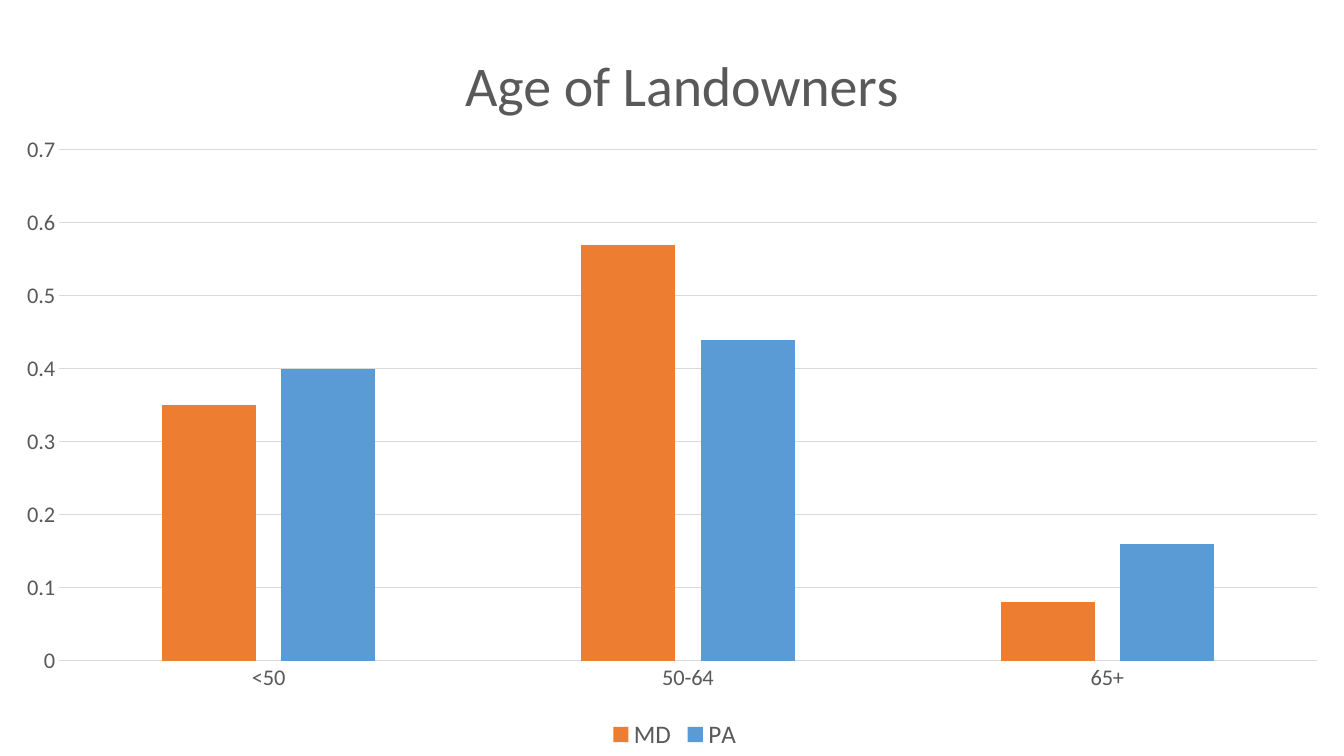
from lxml.etree import SubElement
from pptx import Presentation
from pptx.chart.data import CategoryChartData
from pptx.dml.color import RGBColor
from pptx.enum.chart import XL_CHART_TYPE, XL_LEGEND_POSITION, XL_TICK_MARK
from pptx.oxml.ns import qn
from pptx.util import Emu, Pt

PX = 9072
WIDTH, HEIGHT = 1344, 756
FONT = "Calibri"
TEXT_GREY, LINE_GREY = "595959", "D9D9D9"
AGE_GROUPS = ["<50", "50-64", "65+"]
STATES = [
    ("MD", [0.35, 0.57, 0.08], "ED7D31"),
    ("PA", [0.4, 0.44, 0.16], "5B9BD5"),
]


def px(length):
    return Emu(length * PX)


def color(hex_code):
    return RGBColor.from_string(hex_code)


def style_font(font, size):
    font.name = FONT
    font.size = Pt(size)
    font.bold = False
    font.color.rgb = color(TEXT_GREY)


def style_line(line):
    line.width = Pt(0.75)
    line.color.rgb = color(LINE_GREY)


def place(part, left, top, width=None, height=None):
    """Give a chart part a fixed position, in px of the slide."""
    layout = part.find(qn("c:layout"))
    if layout is None:
        layout = SubElement(part, qn("c:layout"))
        anchor = next(part.find(qn(tag)) for tag in ("c:tx", "c:legendPos")
                      if part.find(qn(tag)) is not None)
        anchor.addnext(layout)
    manual = SubElement(layout, qn("c:manualLayout"))
    settings = [("xMode", "edge"), ("yMode", "edge"),
                ("x", left / WIDTH), ("y", top / HEIGHT)]
    if width:
        settings.insert(0, ("layoutTarget", "inner"))
        settings += [("w", width / WIDTH), ("h", height / HEIGHT)]
    for name, value in settings:
        SubElement(manual, qn(f"c:{name}")).set("val", str(value))


def add_column_chart(slide):
    data = CategoryChartData()
    data.categories = AGE_GROUPS
    for name, values, _ in STATES:
        data.add_series(name, values)
    frame = slide.shapes.add_chart(
        XL_CHART_TYPE.COLUMN_CLUSTERED, 0, 0, px(WIDTH), px(HEIGHT), data)
    chart = frame.chart
    style_font(chart.font, 16)
    plot = chart.plots[0]
    plot.vary_by_categories = False
    plot.gap_width = 219
    plot.overlap = -27
    for series, (_, _, fill) in zip(plot.series, STATES):
        series.format.fill.solid()
        series.format.fill.fore_color.rgb = color(fill)
        series.invert_if_negative = False
    return chart


def style_axes(chart):
    for axis in (chart.category_axis, chart.value_axis):
        axis.major_tick_mark = axis.minor_tick_mark = XL_TICK_MARK.NONE
        style_font(axis.tick_labels.font, 16)
    style_line(chart.category_axis.format.line)
    values = chart.value_axis
    values.minimum_scale, values.maximum_scale = 0, 0.7
    values.major_unit = 0.1
    values.format.line.fill.background()
    style_line(values.major_gridlines.format.line)


def add_title(chart, text):
    title = chart.chart_title
    para = title.text_frame.paragraphs[0]
    para.text = text
    style_font(para.font, 40)
    title.include_in_layout = False


def add_legend(chart):
    chart.has_legend = True
    legend = chart.legend
    legend.position = XL_LEGEND_POSITION.BOTTOM
    legend.include_in_layout = False
    style_font(legend.font, 18)


def main():
    deck = Presentation()
    deck.slide_width, deck.slide_height = px(WIDTH), px(HEIGHT)
    slide = deck.slides.add_slide(deck.slide_layouts[6])
    chart = add_column_chart(slide)
    style_axes(chart)
    add_title(chart, "Age of Landowners")
    add_legend(chart)
    root = chart.plots[0]._element.getparent().getparent()
    place(root.find(qn("c:title")), 455, 37)
    plot_area = root.find(qn("c:plotArea"))
    if plot_area.find(qn("c:layout")) is None:
        plot_area.insert(0, plot_area.makeelement(qn("c:layout")))
    place(plot_area, 59, 150, 1258, 511)
    place(root.find(qn("c:legend")), 605, 718)
    deck.save("out.pptx")


if __name__ == "__main__":
    main()
